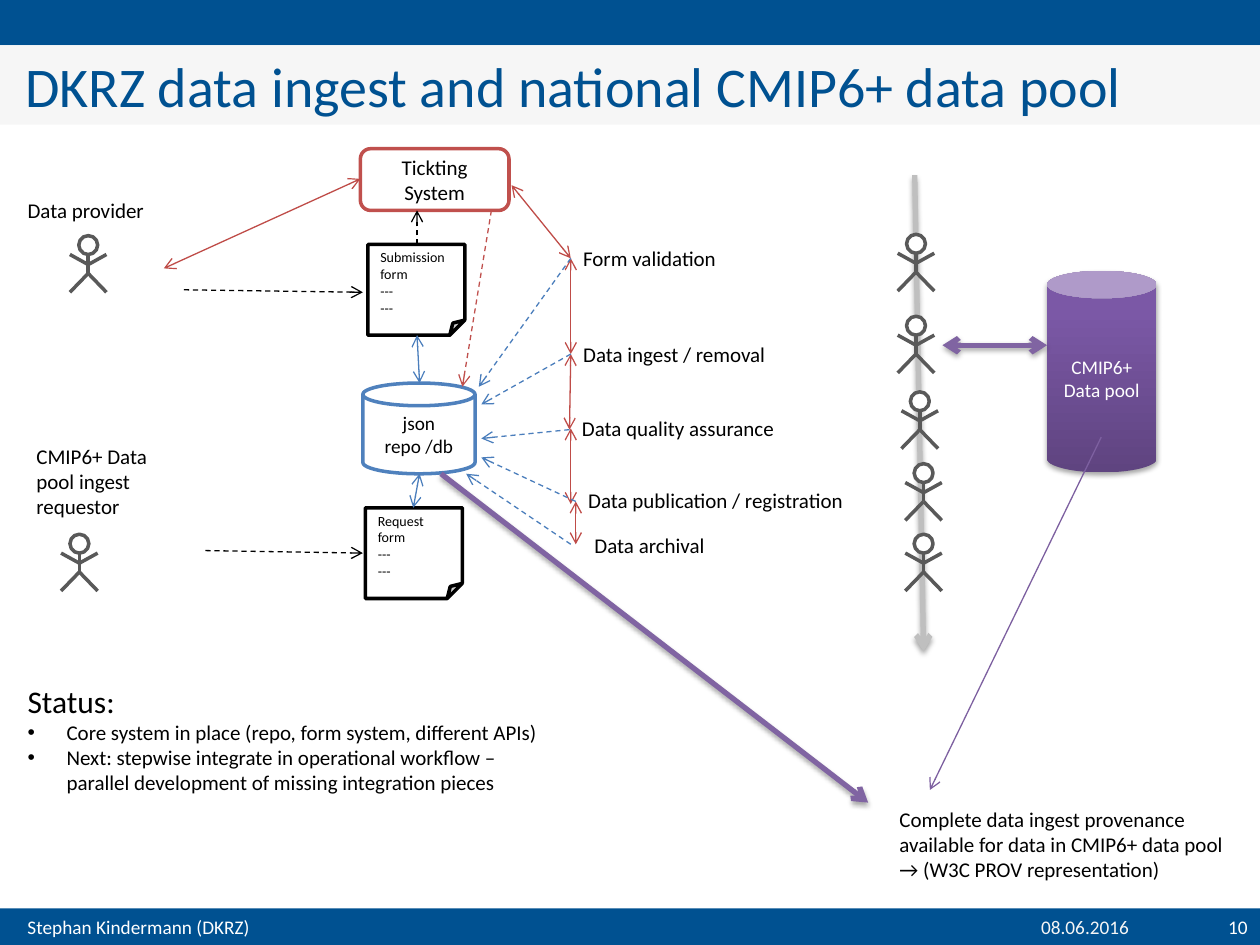
from lxml import etree
from pptx import Presentation
from pptx import util as u
from pptx.dml.color import RGBColor
from pptx.enum import dml, shapes, text
from pptx.oxml.ns import qn

BLUE_BAR = RGBColor(0x00, 0x51, 0x91)
PALE = RGBColor(0xF6, 0xF6, 0xF6)
WHITE = RGBColor(0xFF, 0xFF, 0xFF)
BLACK = RGBColor(0x00, 0x00, 0x00)
DARK_GREY = RGBColor(0x59, 0x59, 0x59)
LIGHT_GREY = RGBColor(0xBF, 0xBF, 0xBF)
BLUE = RGBColor(0x4F, 0x81, 0xBD)
BLUE_LINE = RGBColor(0x4B, 0x7E, 0xBC)
RED = RGBColor(0xC0, 0x50, 0x4D)
RED_LINE = RGBColor(0xBF, 0x4C, 0x48)
PURPLE = RGBColor(0x80, 0x64, 0xA2)
PURPLE_LINE = RGBColor(0x7D, 0x60, 0xA0)
POOL_BOTTOM = RGBColor(0x5F, 0x44, 0x80)
POOL_TOP = RGBColor(0x7B, 0x58, 0xA6)

COLUMNS, ROWS = 100, 75  # grid over the slide
SHAPE, ALIGN = shapes.MSO_SHAPE, text.PP_ALIGN
MIDDLE, TOP = text.MSO_ANCHOR.MIDDLE, text.MSO_ANCHOR.TOP


class Board:
    """Style and current slide; all lengths are grid columns and rows."""

    font = {"name": "Calibri", "size": u.Pt(12)}

    def __init__(self, deck):
        self.slide = deck.slides.add_slide(deck.slide_layouts[6])
        self.column = deck.slide_width / COLUMNS
        self.row = deck.slide_height / ROWS

    def place(self, *lengths):
        return [round(n * (self.row if i % 2 else self.column)) for i, n in enumerate(lengths)]

    def effects(self, properties, shadow):
        effect_list = properties.find(qn("a:effectLst"))
        if effect_list is None:
            effect_list = etree.SubElement(properties, qn("a:effectLst"))
        if shadow:
            outer = etree.SubElement(effect_list, qn("a:outerShdw"), blurRad=str(u.Pt(3.1)),
                                     dist=str(u.Pt(1.8)), dir="5400000", rotWithShape="0")
            tint = etree.SubElement(outer, qn("a:srgbClr"), val="000000")
            etree.SubElement(tint, qn("a:alpha"), val="35000")

    def set_text(self, frame, lines, size=12, color=BLACK, align=ALIGN.LEFT, anchor=TOP, inset=1):
        frame_format = {"word_wrap": True, "vertical_anchor": anchor,
                        "margin_left": round(inset * self.column),
                        "margin_right": round(inset * self.column)}
        for key, value in frame_format.items():
            setattr(frame, key, value)
        for i, line in enumerate(lines):
            paragraph = frame.paragraphs[0] if i == 0 else frame.add_paragraph()
            paragraph.alignment = align
            run = paragraph.add_run()
            run.text = line
            for key, value in {**self.font, "size": u.Pt(size)}.items():
                setattr(run.font, key, value)
            run.font.color.rgb = color

    def label(self, at, *lines, **style):
        box = self.slide.shapes.add_textbox(*self.place(*at))
        self.set_text(box.text_frame, lines, **style)
        return box.text_frame

    def bullet(self, paragraph):
        indent = round(3.1 * self.column)
        properties = paragraph._p.get_or_add_pPr()
        properties.set("marL", str(indent))
        properties.set("indent", str(-indent))
        etree.SubElement(properties, qn("a:buFont"), typeface="Arial")
        etree.SubElement(properties, qn("a:buChar"), char="•")

    def shape(self, kind, at, fill, line=None, lines=(), shadow=False, parent=None, **style):
        item = (parent or self.slide).shapes.add_shape(kind, *self.place(*at))
        item.shadow.inherit = False
        if isinstance(fill, tuple) and not isinstance(fill, RGBColor):
            item.fill.gradient()
            item.fill.gradient_angle = 90
            for stop, color, position in zip(item.fill.gradient_stops, fill, (0, 0.8)):
                stop.color.rgb, stop.position = color, position
        else:
            item.fill.solid()
            item.fill.fore_color.rgb = fill
        if line:
            item.line.color.rgb, item.line.width = line, u.Pt(2)
        else:
            item.line.fill.background()
        self.effects(item._element.spPr, shadow)
        self.set_text(item.text_frame, lines, anchor=MIDDLE, **style)

    def line(self, start, end, color, width=0.75, dash=False, heads="", shadow=False, parent=None):
        item = (parent or self.slide).shapes.add_connector(
            shapes.MSO_CONNECTOR.STRAIGHT, *self.place(*start, *end))
        item.line.color.rgb, item.line.width = color, u.Pt(width)
        if dash:
            item.line.dash_style = dml.MSO_LINE.DASH
        for tag in heads.split():
            etree.SubElement(item.line._get_or_add_ln(), qn(f"a:{tag}End"), type="arrow")
        self.effects(item._element.spPr, shadow)

    def person(self, x, y):
        """Stick figure with the head's top centre at x, y."""
        figure = self.slide.shapes.add_group_shape()
        self.shape(SHAPE.OVAL, (x - 0.75, y, 1.5, 1.5), WHITE, DARK_GREY, parent=figure)
        limbs = [(1.5, 0, 3)]
        limbs += [(joint, side, tip) for joint, tip in ((3, 4.5), (2.3, 1.5)) for side in (1.45, -1.45)]
        for joint, side, tip in limbs:
            self.line((x, y + joint), (x + side, y + tip), DARK_GREY, 2, parent=figure)


BOTH, END = "head tail", "tail"


def main():
    deck = Presentation()
    deck.slide_width, deck.slide_height = u.Inches(10), u.Inches(7.5)
    board = Board(deck)

    # Bars, title and footer
    board.shape(SHAPE.RECTANGLE, (0, 0, 100, 3.6), BLUE_BAR)
    board.shape(SHAPE.RECTANGLE, (0, 72.1, 100, 2.9), BLUE_BAR)
    board.shape(SHAPE.RECTANGLE, (0, 3.6, 100, 6.3), PALE, size=32, color=BLUE_BAR, inset=2,
                lines=["DKRZ data ingest and national CMIP6+ data pool"])
    footer = {"size": 11, "anchor": MIDDLE}
    board.label((1.2, 72.1, 26, 2.9), "Stephan Kindermann (DKRZ)", color=WHITE, **footer)
    board.label((79.1, 72.1, 11.5, 2.9), "08.06.2016", color=PALE, align=ALIGN.RIGHT, **footer)
    board.label((91.7, 72.1, 8.3, 2.9), "10", color=WHITE, align=ALIGN.RIGHT, **footer)

    # People: provider, requestor and the curators along the time line
    board.line((72.6, 13.9), (73.3, 51.7), LIGHT_GREY, 3, heads=END, shadow=True)
    for x, y in ((7, 18.7), (6.3, 42.4), (72.7, 18.6), (72.7, 25.1),
                 (73, 31.1), (73.3, 36.8), (73.3, 42.4)):
        board.person(x, y)
    board.label((1.2, 15.2, 11.8, 3), "Data provider")
    board.label((1.9, 34.7, 11.8, 7.1), "CMIP6+ Data pool ingest requestor")

    # Ticket system, forms and repository
    board.shape(SHAPE.FLOWCHART_ALTERNATE_PROCESS, (28.6, 11.8, 11.8, 4.9), WHITE, RED,
                ["Tickting", "System"], align=ALIGN.CENTER)
    for x, y, lines in ((29.2, 19.4, ["Submission form"]), (29, 40.3, ["Request", "form"])):
        board.shape(SHAPE.FOLDED_CORNER, (x, y, 7.7, 7.2), WHITE, BLACK,
                    [*lines, "---", "---"], size=8)
    board.shape(SHAPE.CAN, (28.8, 30.4, 8.9, 7.2), WHITE, BLUE,
                ["json", "repo /db"], size=11, align=ALIGN.CENTER)

    # Process steps
    for x, y, step in ((45.3, 19, "Form validation"), (45.3, 26.6, "Data ingest / removal"),
                       (45.2, 32.5, "Data quality assurance"),
                       (45.7, 38.2, "Data publication / registration"),
                       (46.2, 41.8, "Data archival")):
        board.label((x, y, 26.4, 3), step)

    # Exchange with the ticket system and between steps
    for start, end in (((45.3, 20.5), (40.6, 14.7)), ((28.6, 14.2), (13, 21.3)),
                       ((45.3, 28.1), (45.3, 20.5)), ((45.2, 34.1), (45.3, 28.1)),
                       ((45.3, 40), (45.3, 34)), ((45.7, 43.2), (45.7, 39.8))):
        board.line(start, end, RED_LINE, heads=BOTH)
    board.line((39, 16.7), (36.7, 30.7), RED, dash=True, heads=END)

    # Forms: input, ticket and repository links
    for start, end in (((14.6, 23), (28.8, 23.2)), ((33.1, 19.4), (33.1, 16.7)),
                       ((16.3, 43.7), (28.8, 43.9))):
        board.line(start, end, BLACK, dash=True, heads=END)
    for start, end in (((33.1, 26.6), (33.3, 30.4)), ((33.3, 37.6), (32.8, 40.3))):
        board.line(start, end, BLUE_LINE, heads=BOTH)

    # Steps reporting to the repository
    for start, end in (((45.3, 20.5), (38, 30.7)), ((45.3, 28.1), (38.2, 32.1)),
                       ((45.2, 34.1), (38.2, 34.8)), ((45.7, 39.8), (38.2, 36.3)),
                       ((45.3, 43.2), (37, 37.6))):
        board.line(start, end, BLUE_LINE, dash=True, heads=END)

    # Data pool and provenance
    board.shape(SHAPE.CAN, (83.1, 21.5, 8.7, 16), (POOL_BOTTOM, POOL_TOP), shadow=True,
                lines=["CMIP6+", "Data pool"], size=11, color=WHITE, align=ALIGN.CENTER)
    board.line((74.8, 27.4), (83.1, 27.4), PURPLE, 3, heads=BOTH, shadow=True)
    board.line((35, 37.6), (68.9, 63.7), PURPLE, 3, heads=END, shadow=True)
    board.line((87.4, 34.7), (73.8, 62.7), PURPLE_LINE, heads=END)
    board.label((70.4, 63.5, 29.9, 7.1),
                "Complete data ingest provenance available for data in CMIP6+ data pool",
                "→ (W3C PROV representation)")

    # Status
    status = board.label(
        (1.2, 53.6, 44.1, 10.1), "Status:",
        "Core system in place (repo, form system, different APIs)",
        "Next: stepwise integrate in operational workflow – "
        "parallel development of missing integration pieces")
    heading, *points = status.paragraphs
    heading.runs[0].font.size = u.Pt(18)
    for point in points:
        board.bullet(point)

    deck.save("out.pptx")


if __name__ == "__main__":
    main()
